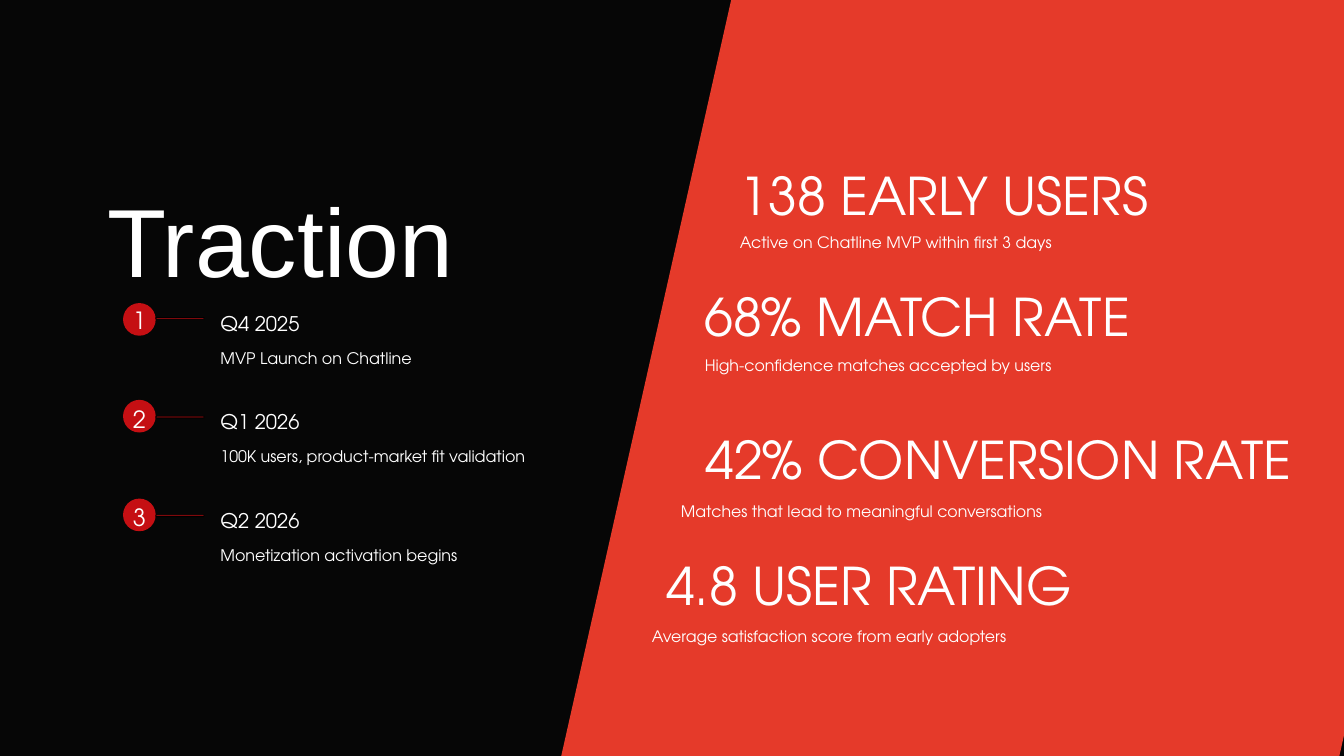
from pptx import Presentation
from pptx.dml.color import RGBColor
from pptx.enum.shapes import MSO_SHAPE
from pptx.enum.text import MSO_ANCHOR, MSO_AUTO_SIZE, PP_ALIGN
from pptx.util import Pt

SANS = "TeX Gyre Adventor"
WHITE, RED, DARK_RED = "FFFFFF", "E53A2A", "C50F13"


def paint(sp, fill, line=None):
    sp.shadow.inherit = False
    sp.fill.solid()
    sp.fill.fore_color.rgb = RGBColor.from_string(fill)
    if line:
        sp.line.color.rgb = RGBColor.from_string(line)
        sp.line.width = Pt(1)
    else:
        sp.line.fill.background()


def add_text(text, x, y, w, h, size, font=SANS, color=WHITE,
             align=PP_ALIGN.LEFT, spacing=None, sp=None):
    """Write one line of text in sp, or in a new text box."""
    sp = sp or s.shapes.add_textbox(0, 0, 0, 0)
    sp.left, sp.top, sp.width, sp.height = Pt(x), Pt(y), Pt(w), Pt(h)
    tf = sp.text_frame
    tf.word_wrap = True
    tf.auto_size = MSO_AUTO_SIZE.SHAPE_TO_FIT_TEXT
    tf.vertical_anchor = MSO_ANCHOR.TOP
    tf.margin_left = tf.margin_right = tf.margin_top = tf.margin_bottom = 0
    p = tf.paragraphs[0]
    p.alignment = align
    p.line_spacing = spacing
    p.space_before = Pt(0)
    r = p.add_run()
    r.text = text
    r.font.name, r.font.size = font, Pt(size)
    r.font.color.rgb = RGBColor.from_string(color)


prs = Presentation()
prs.slide_width, prs.slide_height = Pt(1440), Pt(810)
s = prs.slides.add_slide(prs.slide_layouts[5])
s.background.fill.solid()
s.background.fill.fore_color.rgb = RGBColor.from_string("060606")

# Slanted red panel
fb = s.shapes.build_freeform(Pt(824.4), Pt(-182.2))
fb.add_line_segments([(Pt(1658.2), Pt(-182.2)), (Pt(1380.2), Pt(1054.1)),
                      (Pt(546.5), Pt(1054.1))], close=True)
paint(fb.convert_to_shape(), RED)

add_text("Traction", 115.2, 163.4, 378.7, 125.3, 103.6, font="Arial",
         spacing=1.24, sp=s.shapes.title)

# Milestones: number, dot top, quarter, description
milestones = [
    (324.7, "Q4 2025", "MVP Launch on Chatline"),
    (428.4, "Q1 2026", "100K users, product-market fit validation"),
    (534.2, "Q2 2026", "Monetization activation begins"),
]
for i, (dot_y, quarter, detail) in enumerate(milestones):
    y = 326.9 + i * 105.8
    dot = s.shapes.add_shape(MSO_SHAPE.OVAL, Pt(131.8), Pt(dot_y), Pt(35), Pt(35))
    paint(dot, DARK_RED)
    bar = s.shapes.add_shape(MSO_SHAPE.ROUNDED_RECTANGLE, Pt(167), Pt(y + 13.3),
                             Pt(51.8), Pt(1.7))
    bar.adjustments[0] = 0.5
    paint(bar, DARK_RED, line="000000")
    add_text(str(i + 1), 141.8, y + 0.7, 15.1, 27.4, 25.4, align=PP_ALIGN.CENTER)
    add_text(quarter, 236.2, y, 87.8, 25.9, 21.6, spacing=1.24)
    add_text(detail, 236.2, y + 33.8, 411.8, 24.5, 17.1, spacing=1.61)

# Metrics: headline, its left, top, width and alignment; caption, its left, top and width
metrics = [
    ("138 EARLY USERS", 792.7, 175, 637.9, PP_ALIGN.LEFT,
     "Active on Chatline MVP within first 3 days", 792.7, 236.9, 417.6),
    ("68% MATCH RATE", 754.6, 305.3, 555.1, PP_ALIGN.LEFT,
     "High-confidence matches accepted by users", 755.3, 368.6, 477.4),
    ("42% CONVERSION RATE", 671.8, 457.9, 795.6, PP_ALIGN.CENTER,
     "Matches that lead to meaningful conversations", 729.4, 524.9, 603.4),
    ("4.8 USER RATING", 591.1, 592.6, 679.7, PP_ALIGN.CENTER,
     "Average satisfaction score from early adopters", 698.4, 659.5, 891.4),
]
for head, x, y, w, align, caption, cx, cy, cw in metrics:
    add_text(head, x, y, w, 58.3, 55.7, align=align)
    add_text(caption, cx, cy, cw, 25.2, 16.9, spacing=1.61)

prs.save("out.pptx")
